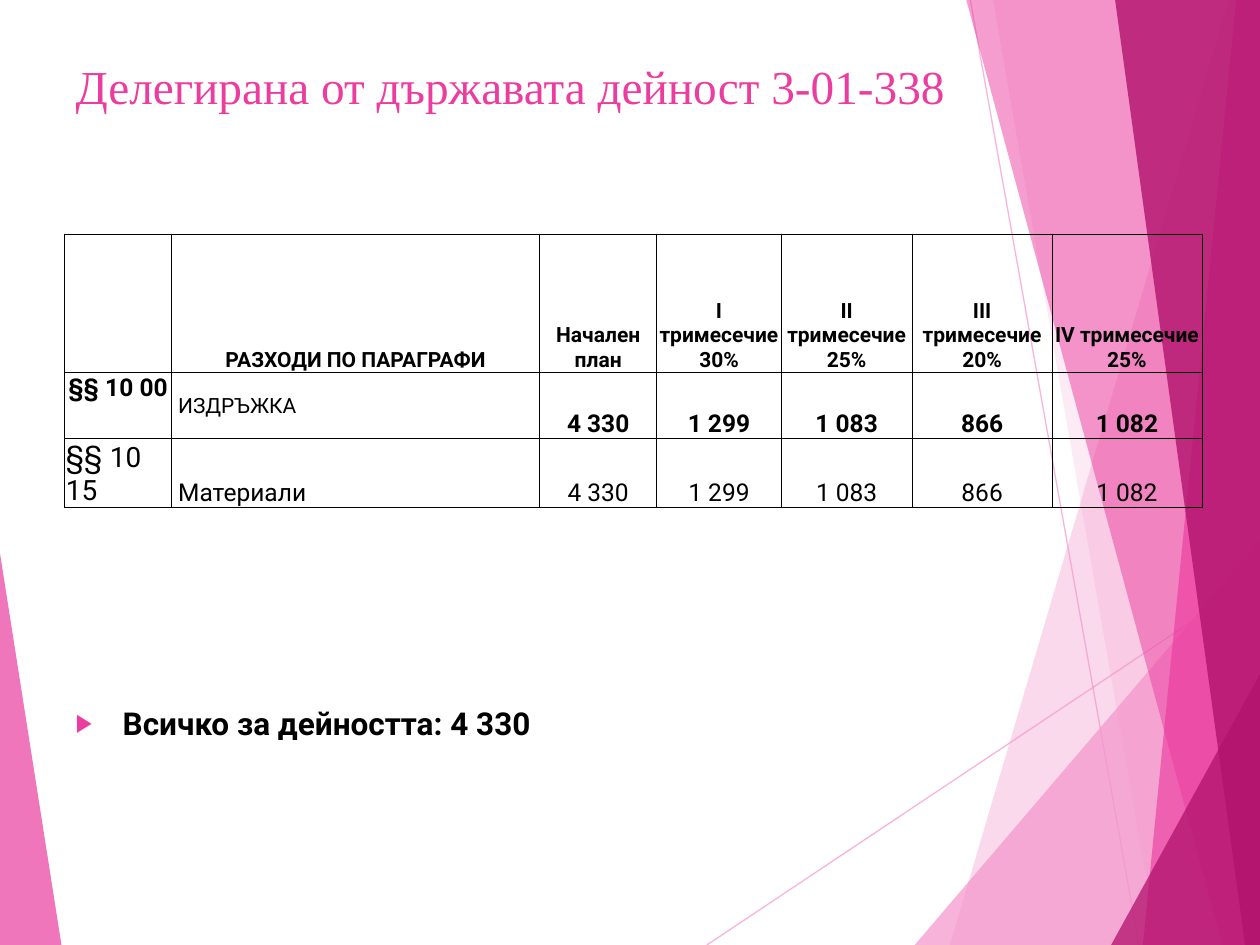
from pptx import Presentation
from pptx import util as u
from pptx.dml import color
from pptx.enum import shapes, text
from pptx.oxml import ns, xmlchemy

HUES = {"pale": "F496CB", "pink": "EB3D9F", "deep": "B2136D", "ink": "000000"}
WIDE, HIGH = 25.4, 19.05
MID = text.PP_ALIGN.CENTER
LEFT = text.PP_ALIGN.LEFT
TOP, HALF, LOW = (text.MSO_ANCHOR.TOP, text.MSO_ANCHOR.MIDDLE,
                  text.MSO_ANCHOR.BOTTOM)


def tint(hue):
    """Return the named colour."""
    return color.RGBColor.from_string(HUES[hue])


def put(item, vals):
    """Set attributes from a dict of values."""
    for key, val in vals.items():
        setattr(item, key, val)


def style(run, face="Roboto", size=12, bold=False, hue="ink"):
    """Format the font of one run."""
    put(run.font, {"name": face, "size": u.Pt(size), "bold": bold})
    run.font.color.rgb = tint(hue)


def node(home, tag, **vals):
    """Append an XML element with attributes and return it."""
    part = xmlchemy.OxmlElement(tag)
    for key, val in vals.items():
        part.set(key, str(val))
    home.append(part)
    return part


def fade(item, share):
    """Make the solid colour of a shape partly transparent."""
    for tone in item.element.iter(ns.qn("a:srgbClr")):
        node(tone, "a:alpha", val=share * 1000)


def shard(slide, points, hue, share):
    """Draw one translucent polygon from points in centimetres."""
    dots = [(round(x * 100), round(y * 100)) for x, y in points]
    pen = slide.shapes.build_freeform(*dots[0], scale=u.Cm(0.01))
    pen.add_line_segments(dots[1:], close=True)
    item = pen.convert_to_shape()
    item.shadow.inherit = False
    item.fill.solid()
    item.fill.fore_color.rgb = tint(hue)
    item.line.fill.background()
    fade(item, share)


def ray(slide, start, end):
    """Draw one thin translucent line."""
    ends = [u.Cm(v) for v in start + end]
    item = slide.shapes.add_connector(shapes.MSO_CONNECTOR.STRAIGHT, *ends)
    item.line.width = u.Pt(0.75)
    item.line.color.rgb = tint("pale")
    fade(item, 70)
    node(item.element.spPr, "a:effectLst")


def facets(slide, box):
    """Draw the backdrop of rays, bands and wedges in the box."""
    x, y, w, h = box
    right, foot = x + w, y + h
    ray(slide, (x + 14.25, foot), (right, y + 11.61))
    ray(slide, (x + 19.56, y), (x + 22.96, foot))

    def band(head, tail, hue, share):
        """Fill from a slanted edge to the right side."""
        shard(slide, [(x + head, y), (x + tail, foot), (right, foot),
                      (right, y)], hue, share)

    def wedge(tail, peak, hue, share):
        """Fill the lower right corner."""
        shard(slide, [(x + tail, foot), (right, y + peak), (right, foot)],
              hue, share)

    band(24.77, 19.15, "pale", 36)
    band(20.02, 23.34, "pale", 20)
    wedge(18.44, 10.9, "pale", 72)
    band(19.48, 24.64, "pink", 50)
    band(24.92, 23.04, "pink", 66)
    band(22.48, 25.1, "deep", 80)
    wedge(22.4, 13.59, "deep", 76)
    shard(slide, [(x, y + 11.15), (x + 1.24, foot), (x, foot)], "pink", 70)


def write(hold, box, words, **font):
    """Move a placeholder to the box, in front, and fill in its text."""
    hold.element.getparent().append(hold.element)
    put(hold, dict(zip(("left", "top", "width", "height"), map(u.Cm, box))))
    frame = hold.text_frame
    put(frame, {"word_wrap": True, "vertical_anchor": TOP,
                "auto_size": text.MSO_AUTO_SIZE.NONE})
    para = frame.paragraphs[0]
    para.alignment = LEFT
    run = para.add_run()
    run.text = words
    style(run, **font)
    return para


def total(hold, box):
    """Place the bulleted total line."""
    para = write(hold, box, "Всичко за дейността: 4 330", size=18, bold=True)
    para.space_before = u.Pt(10)
    props = para._p.get_or_add_pPr()
    put(props, {})
    props.set("marL", str(u.Cm(0.95)))
    props.set("indent", str(u.Cm(-0.95)))
    node(node(props, "a:buClr"), "a:srgbClr", val=HUES["pink"])
    node(props, "a:buSzPct", val=80000)
    node(props, "a:buFont", typeface="Arial")
    node(props, "a:buChar", char="▶")


def frame(cell):
    """Clear the fill of a cell and rule its four sides."""
    cell.fill.background()
    props = cell._tc.get_or_add_tcPr()
    for spot, side in enumerate("LRTB"):
        edge = xmlchemy.OxmlElement(f"a:ln{side}")
        edge.set("w", str(u.Pt(0.5)))
        node(node(edge, "a:solidFill"), "a:srgbClr", val=HUES["ink"])
        props.insert(spot, edge)


def enter(cell, words, align=MID, anchor=LOW, pad=0.03, **font):
    """Write the lines of a cell."""
    put(cell, {"margin_left": u.Cm(pad), "margin_right": u.Cm(0.03),
               "margin_top": u.Cm(0.03), "margin_bottom": 0,
               "vertical_anchor": anchor})
    cell.text = words
    for para in cell.text_frame.paragraphs:
        para.alignment = align
        for run in para.runs:
            style(run, **font)


def budget(slide, box):
    """Build the table of spending by quarter."""
    cols = [2.16, 7.42, 2.36, 2.51, 2.64, 2.82, 3.02]
    rows = [2.79, 1.33, 1.39]
    heads = ["", "РАЗХОДИ ПО ПАРАГРАФИ", "Начален план", "I тримесечие\n30%",
             "II тримесечие\n25%", "III тримесечие\n20%", "IV тримесечие 25%"]
    sums = ["4 330", "1 299", "1 083", "866", "1 082"]
    grid = slide.shapes.add_table(3, 7, *map(u.Cm, box)).table
    put(grid, {"first_row": False, "horz_banding": False})
    for col, wide in zip(grid.columns, cols):
        col.width = u.Cm(wide)
    for row, high in zip(grid.rows, rows):
        row.height = u.Cm(high)
    for cell in grid.iter_cells():
        frame(cell)
    for col, head in enumerate(heads):
        enter(grid.cell(0, col), head, bold=True)
    for row in (1, 2):
        for col, val in enumerate(sums, 2):
            enter(grid.cell(row, col), val, size=14, bold=row == 1)
    enter(grid.cell(1, 0), "§§ 10 00", anchor=TOP, size=14, bold=True)
    enter(grid.cell(1, 1), "ИЗДРЪЖКА", LEFT, HALF, 0.13, size=12)
    enter(grid.cell(2, 0), "§§ ", LEFT, size=17)
    code = grid.cell(2, 0).text_frame.paragraphs[0].add_run()
    code.text = "10 15"
    style(code, size=16)
    enter(grid.cell(2, 1), "Материали", LEFT, pad=0.13, size=14)


def main():
    """Build the slide and save it."""
    deck = Presentation()
    put(deck, {"slide_width": u.Cm(WIDE), "slide_height": u.Cm(HIGH)})
    slide = deck.slides.add_slide(deck.slide_layouts[1])
    title, body = slide.placeholders
    facets(slide, (0, 0, WIDE, HIGH))
    write(title, (1.27, 1.02, 22.43, 3.1),
          "Делегирана от държавата дейност 3-01-338",
          face="Times New Roman", size=27, hue="pink")
    total(body, (1.27, 14.07, 15.42, 2.29))
    budget(slide, (1.3, 4.72, 22.93, 5.51))
    deck.save("out.pptx")


if __name__ == "__main__":
    main()
